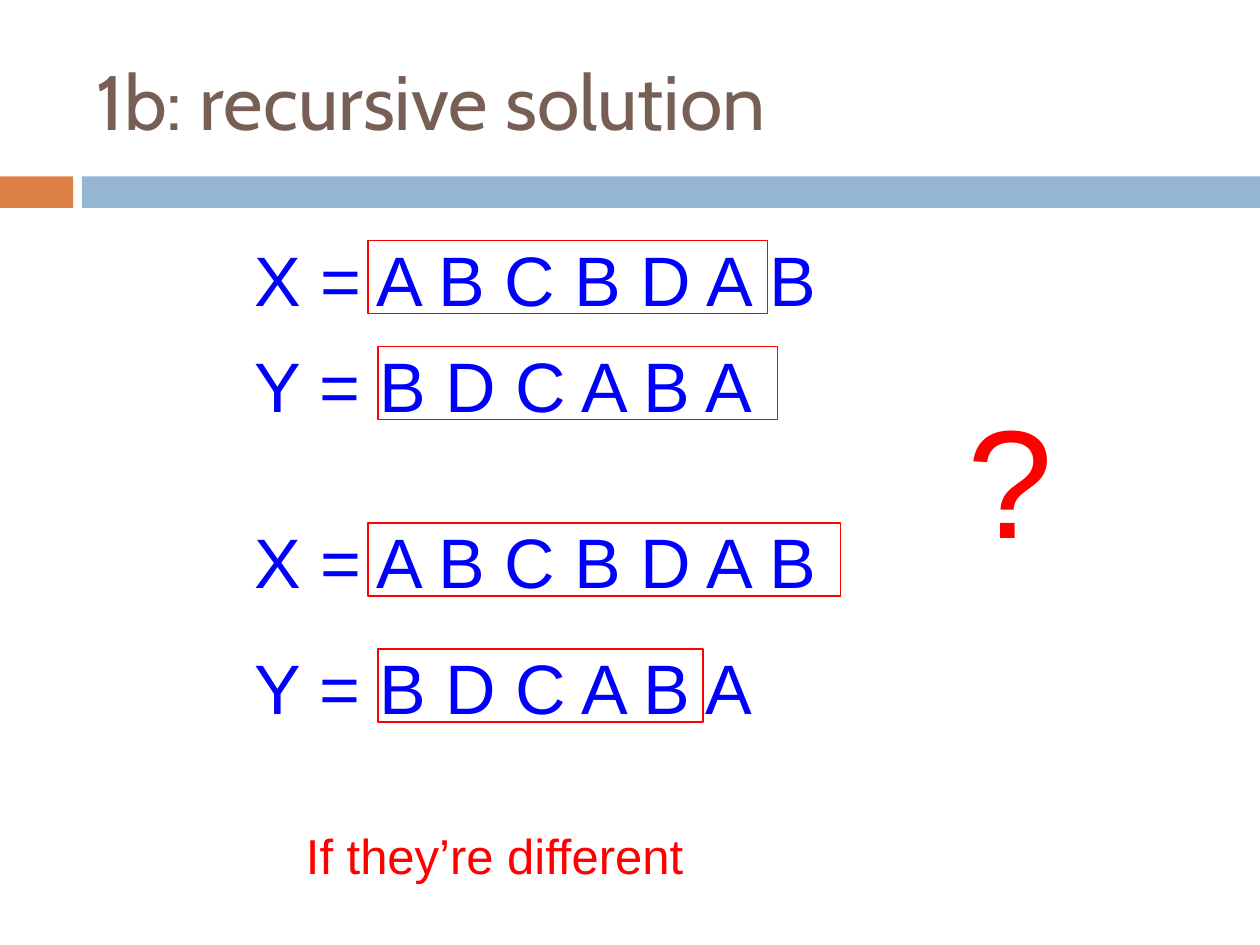
from pptx import Presentation
from pptx.dml.color import RGBColor as Color
from pptx.enum.shapes import MSO_SHAPE as Shape
from pptx.enum.text import MSO_ANCHOR as Anchor
from pptx.util import Inches, Pt

THEME = {
    "title": {"font": "Cabin", "size": 44, "color": "775F55"},
    "sequence": {"font": "Arial", "size": 40, "color": "0000FF"},
    "note": {"font": "Arial", "size": 28, "color": "FF0000"},
    "question": {"font": "Arial", "size": 88, "color": "FF0000"},
    "accent": "DD8047",
    "band": "94B6D2",
    "frame": "FF0000",
}

BANDS = [
    ("accent", (0, 1.4, 0.58, 0.25)),
    ("band", (0.65, 1.4, 9.35, 0.25)),
]

LABELS = [
    ("1b: recursive solution", "title", (0.67, 0.25, 8.92, 1.08), Anchor.MIDDLE),
    ("If they’re different", "note", (2.33, 6.5, 3.58, 0.57), Anchor.TOP),
    ("?", "question", (7.58, 3, 2, 1.57), Anchor.TOP),
]

SEQUENCES = {
    "X": {"text": "X = A B C B D A B", "width": 4.83, "frame_left": 2.92},
    "Y": {"text": "Y = B D C A B A", "width": 5.17, "frame_left": 3},
}

ROWS = [
    ("X", 1.83, 3.17),
    ("Y", 2.67, 3.17),
    ("X", 4.07, 3.75),
    ("Y", 5.07, 2.58),
]

SEQUENCE_LEFT = 1.92
SEQUENCE_HEIGHT = 0.77
FRAME_HEIGHT = 0.58
FRAME_DROP = 0.08


def add_text(page, text, style_name, place, anchor=Anchor.TOP):
    style = THEME[style_name]
    box = page.shapes.add_textbox(*map(Inches, place))
    frame = box.text_frame
    frame.word_wrap = True
    frame.vertical_anchor = anchor
    span = frame.paragraphs[0].add_run()
    span.text = text
    span.font.name = style["font"]
    span.font.size = Pt(style["size"])
    span.font.color.rgb = Color.from_string(style["color"])


def add_rectangle(page, place):
    box = page.shapes.add_shape(Shape.RECTANGLE, *map(Inches, place))
    box.shadow.inherit = False
    return box


def add_band(page, color_name, place):
    box = add_rectangle(page, place)
    box.fill.solid()
    box.fill.fore_color.rgb = Color.from_string(THEME[color_name])
    box.line.fill.background()


def add_prefix_frame(page, place):
    box = add_rectangle(page, place)
    box.fill.background()
    box.line.color.rgb = Color.from_string(THEME["frame"])
    box.line.width = Pt(0.75)


def main():
    deck = Presentation()
    deck.slide_width, deck.slide_height = Inches(10), Inches(7.5)
    page = deck.slides.add_slide(deck.slide_layouts[6])

    for color_name, place in BANDS:
        add_band(page, color_name, place)

    for text, style_name, place, anchor in LABELS:
        add_text(page, text, style_name, place, anchor)

    for name, top, frame_width in ROWS:
        sequence = SEQUENCES[name]
        add_text(page, sequence["text"], "sequence",
                 (SEQUENCE_LEFT, top, sequence["width"], SEQUENCE_HEIGHT))
        add_prefix_frame(page, (sequence["frame_left"], top + FRAME_DROP,
                                frame_width, FRAME_HEIGHT))

    deck.save("out.pptx")


if __name__ == "__main__":
    main()
